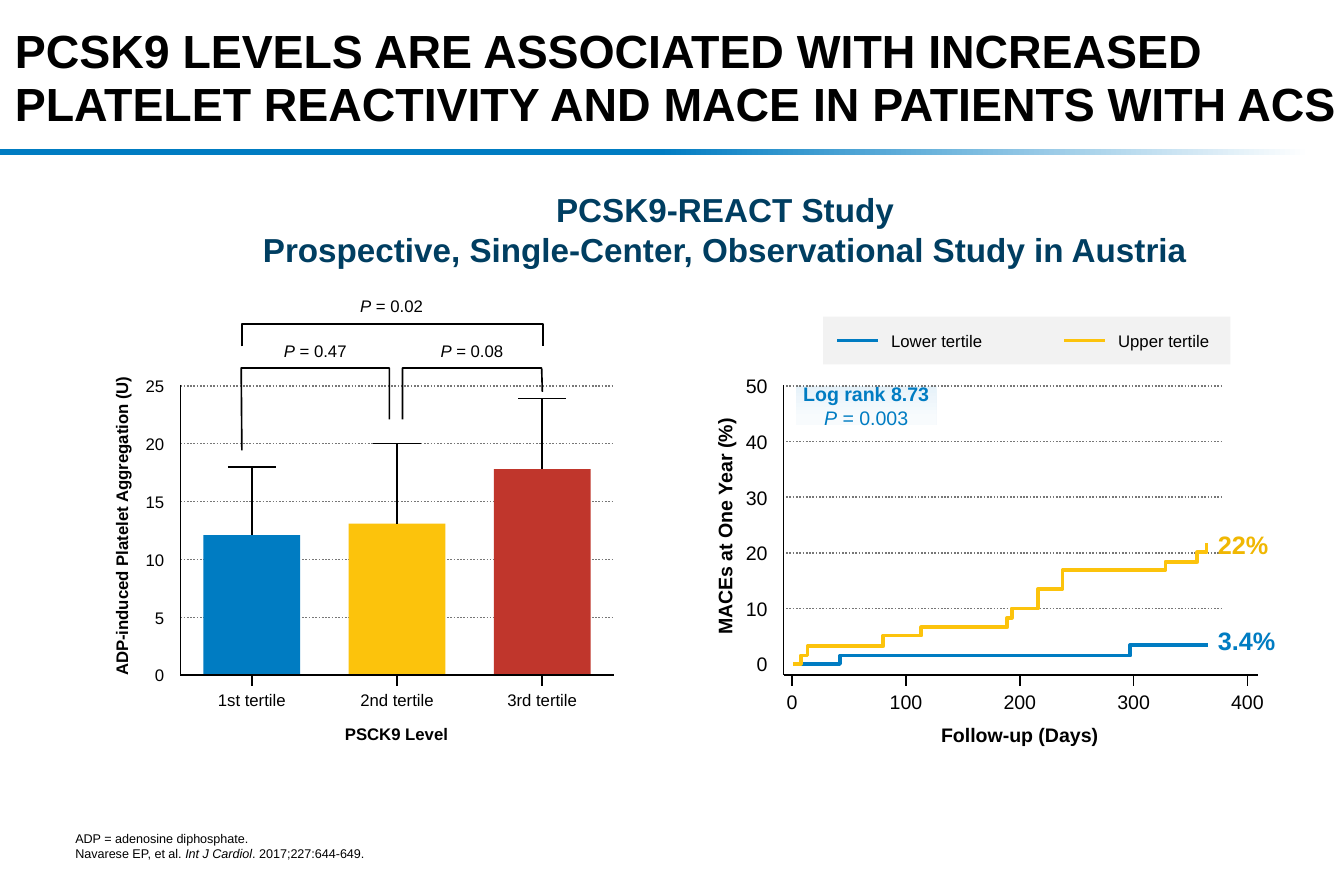
import lxml.etree
import pptx
import pptx.dml.color
import pptx.enum.dml
import pptx.enum.shapes
import pptx.enum.text
import pptx.oxml.ns
import pptx.util

Pt = pptx.util.Pt
RGBColor = pptx.dml.color.RGBColor
SHAPE = pptx.enum.shapes.MSO_SHAPE
ALIGN = pptx.enum.text.PP_ALIGN
ANCHOR = pptx.enum.text.MSO_ANCHOR
AUTO = pptx.enum.text.MSO_AUTO_SIZE

BLACK = RGBColor(0x00, 0x00, 0x00)
WHITE = RGBColor(0xFF, 0xFF, 0xFF)
NAVY = RGBColor(0x00, 0x3E, 0x61)
BLUE = RGBColor(0x00, 0x7C, 0xC2)
YELLOW = RGBColor(0xFC, 0xC3, 0x0C)
GOLD = RGBColor(0xF0, 0xB7, 0x02)
RED = RGBColor(0xC0, 0x36, 0x2C)
GREY = RGBColor(0x77, 0x77, 0x77)
PALE_GREY = RGBColor(0xF2, 0xF2, 0xF2)
ICE = RGBColor(0xE6, 0xF2, 0xF9)
PALE_ICE = RGBColor(0xF8, 0xFB, 0xFD)

SMALL, MEDIUM, LARGE = 10.1, 11.8, 15.2
DIGIT = 0.56


def write(sp, text, size=SMALL, color=BLACK, bold=False, font="Arial",
          align=ALIGN.CENTER, anchor=ANCHOR.TOP, wrap=False, spacing=None):
    tf = sp.text_frame
    tf.margin_left = tf.margin_top = tf.margin_right = tf.margin_bottom = 0
    tf.word_wrap = wrap
    tf.auto_size = AUTO.NONE if wrap else AUTO.SHAPE_TO_FIT_TEXT
    tf.vertical_anchor = anchor
    p = tf.paragraphs[0]
    p.alignment = align
    if spacing:
        p.line_spacing = spacing
    for words, change in [(text, {})] if isinstance(text, str) else text:
        for i, line in enumerate(words.split("\n")):
            if i:
                p.add_line_break()
            if line:
                r = p.add_run()
                r.text = line
                r.font.name = font
                r.font.size = Pt(size)
                r.font.color.rgb = color
                r.font.bold = change.get("bold", bold)
                r.font.italic = change.get("italic", False)


class Board:
    def __init__(self, slide, thin=1, thick=2.25):
        self.shapes = slide.shapes
        self.thin = thin
        self.thick = thick

    def text(self, text, x, y, w, h, rotation=0, **fmt):
        sp = self.shapes.add_textbox(Pt(x), Pt(y), Pt(w), Pt(h))
        sp.rotation = rotation
        write(sp, text, **fmt)

    def number(self, value, size, y, right=None, center=None):
        w, h = len(str(value)) * size * DIGIT, size * 1.2
        if center is None:
            self.text(str(value), right - w, y - h / 2, w, h, size=size,
                      align=ALIGN.RIGHT, anchor=ANCHOR.MIDDLE)
        else:
            self.text(str(value), center - w / 2, y, w, h, size=size)

    def rect(self, x, y, w, h, color=None, stops=None, angle=0):
        sp = self.shapes.add_shape(SHAPE.RECTANGLE, Pt(x), Pt(y), Pt(w), Pt(h))
        sp.shadow.inherit = False
        sp.line.fill.background()
        if stops:
            sp.fill.gradient()
            sp.fill.gradient_angle = angle
            for stop, (position, rgb) in zip(sp.fill.gradient_stops, stops):
                stop.position = position
                stop.color.rgb = rgb
        else:
            sp.fill.solid()
            sp.fill.fore_color.rgb = color
        return sp

    def line(self, x1, y1, x2, y2, color=BLACK, width=None, dotted=False):
        c = self.shapes.add_connector(pptx.enum.shapes.MSO_CONNECTOR.STRAIGHT,
                                      Pt(x1), Pt(y1), Pt(x2), Pt(y2))
        c.line.color.rgb = color
        c.line.width = Pt(width or self.thin)
        if dotted:
            c.line.dash_style = pptx.enum.dml.MSO_LINE.ROUND_DOT
        lxml.etree.SubElement(c._element.spPr, pptx.oxml.ns.qn("a:effectLst"))
        return c

    def outline(self, points, color=BLACK, width=None):
        points = [(Pt(x), Pt(y)) for x, y in points]
        fb = self.shapes.build_freeform(*points[0])
        fb.add_line_segments(points[1:], close=False)
        self.stroke(fb.convert_to_shape(), color, width)

    def bracket(self, x, y, w, h):
        sp = self.shapes.add_shape(SHAPE.RIGHT_BRACKET, Pt(x + (w - h) / 2),
                                   Pt(y - (w - h) / 2), Pt(h), Pt(w))
        sp.adjustments[0] = 0
        sp.rotation = 270
        self.stroke(sp, BLACK)

    def stroke(self, sp, color, width=None):
        sp.shadow.inherit = False
        sp.fill.background()
        sp.line.color.rgb = color
        sp.line.width = Pt(width or self.thin)


def draw_aggregation(b):
    left, right, base, unit = 108.7, 370, 407, 6.98
    for value in range(0, 30, 5):
        y = base - value * unit
        if value:
            b.line(left, y, right, y, GREY, dotted=True)
        b.number(value, SMALL, y, right=99)
    bars = [("1st tertile", 12.1, 18, BLUE),
            ("2nd tertile", 13.1, 20, YELLOW),
            ("3rd tertile", 17.8, 23.9, RED)]
    for i, (label, value, top, color) in enumerate(bars):
        x, y = 151.8 + 87.5 * i, base - top * unit
        h = value * unit
        bar = b.rect(x - 29.2, base - h, 58.4, h, color)
        b.line(x - 14.5, y, x + 14.5, y)
        b.line(x, y, x, base - h).end_connect(bar, 0)
        b.line(x, base, x, base + 6.4).begin_connect(bar, 2)
        b.text(label, x - 25, 415.6, 50, 12.2)
    b.line(left, 232, left, base)
    b.line(left, base, right, base)
    b.text("ADP-induced Platelet Aggregation (U)", -19.4, 311, 185, 12.2,
           rotation=270, bold=True, anchor=ANCHOR.BOTTOM)
    b.text("PSCK9 Level", 206, 436.3, 66, 12.2, bold=True)

    b.bracket(145.8, 195.1, 181.4, 13.7)
    b.outline([(145.8, 271.4), (145.4, 221.8), (234.7, 221.8), (234.7, 252.7)])
    b.outline([(242.6, 252.7), (242.6, 221.8), (326.5, 221.8), (326.9, 236.2)])
    for value, x, y in [("0.02", 216, 178), ("0.47", 170, 205.2),
                        ("0.08", 264.4, 205.2)]:
        b.text([("P", {"italic": True}), (" = " + value, {})], x, y, 40, 12.2)


def draw_events(b):
    left, right, axis, base, unit = 472.3, 758.2, 407, 400.2, 3.35
    origin, day = 477.4, 0.686
    box = b.rect(479.5, 232.6, 85, 23.8, stops=[(0, ICE), (0.79, PALE_ICE)], angle=270)
    write(box, [("Log rank 8.73\n", {"bold": True}), ("P", {"italic": True}),
                (" = 0.003", {})], size=MEDIUM, color=BLUE,
          anchor=ANCHOR.MIDDLE, wrap=True)
    for value in range(0, 60, 10):
        y = base - value * unit
        if value:
            b.line(473.8, y, 735.8, y, GREY, dotted=True)
        b.number(value, MEDIUM, y, right=462.6)
    b.line(left, 232, left, axis)
    b.line(left, axis, right, axis)
    for days in range(0, 500, 100):
        x = origin + days * day
        b.line(x, axis, x, axis + 6.4)
        b.number(days, MEDIUM, 415.6, center=x)
    b.text("MACEs at One Year (%)", 370.1, 310.3, 133.2, 14.2, rotation=270,
           size=MEDIUM, bold=True, anchor=ANCHOR.BOTTOM)
    b.text("Follow-up (Days)", 565.5, 436, 98, 14.2, size=MEDIUM, bold=True)

    lower = [(42, 1.5), (297, 3.4), (365, 3.4)]
    upper = [(7.5, 1.5), (13.5, 3.2), (80, 5.1), (113.5, 6.6), (189, 8.3),
             (193, 10), (216, 13.5), (237.5, 16.9), (328, 18.4), (356, 20.1),
             (364, 21.8)]
    b.rect(496.1, 190.8, 245.5, 28.8, PALE_GREY)
    for label, steps, color, key, end, end_color, end_y in [
            ("Lower tertile", lower, BLUE, 504.7, "3.4%", BLUE, 376.6),
            ("Upper tertile", upper, YELLOW, 641.5, "22%", GOLD, 319)]:
        points, level = [(origin + day, base)], base
        for days, value in steps:
            x = origin + days * day
            points.append((x, level))
            level = base - value * unit
            points.append((x, level))
        b.outline(points, color, b.thick)
        b.line(key, 205.2, key + 24.5, 205.2, color, b.thick)
        b.text(label, key + 32.4, 199.4, 58, 12.2, align=ALIGN.LEFT,
               anchor=ANCHOR.MIDDLE)
        b.text(end, 734, end_y, 40, 18.7, size=LARGE,
               color=end_color, bold=True, align=ALIGN.LEFT, anchor=ANCHOR.MIDDLE)


def main():
    prs = pptx.Presentation()
    prs.slide_width, prs.slide_height = Pt(810), Pt(540)
    s = prs.slides.add_slide(prs.slide_layouts[6])
    b = Board(s)
    b.rect(0, 90, 789.8, 3.6, stops=[(0, WHITE), (0.5, BLUE)], angle=180)
    b.text("PCSK9 LEVELS ARE ASSOCIATED WITH INCREASED\n"
           "PLATELET REACTIVITY AND MACE IN PATIENTS WITH ACS",
           9, 10.5, 801, 69.1, size=28, bold=True, align=ALIGN.LEFT,
           anchor=ANCHOR.BOTTOM, wrap=True, spacing=0.95)
    b.text("PCSK9-REACT Study\n"
           "Prospective, Single-Center, Observational Study in Austria",
           140, 114, 594, 30.2, size=20, color=NAVY, bold=True, wrap=True)
    draw_aggregation(b)
    draw_events(b)
    b.text([("ADP = adenosine diphosphate.\nNavarese EP, et al. ", {}),
            ("Int J Cardiol", {"italic": True}), (". 2017;227:644-649.", {})],
           45.4, 499.5, 673.2, 19.4, size=7.6, align=ALIGN.LEFT,
           anchor=ANCHOR.BOTTOM, wrap=True, spacing=0.95)
    prs.save("out.pptx")


if __name__ == "__main__":
    main()
